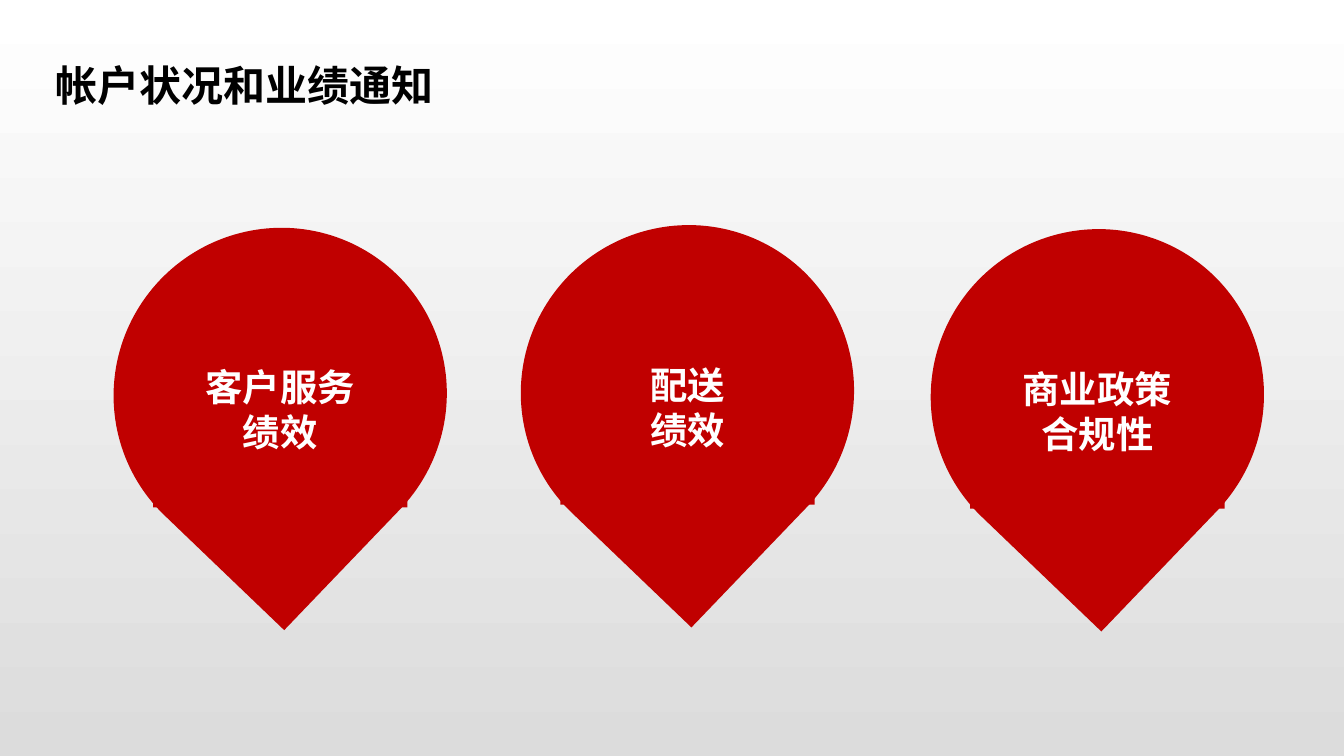
import pptx
import pptx.util
import pptx.dml.color
import pptx.enum.shapes
import pptx.enum.text
import pptx.oxml.ns
import lxml.etree

SLIDE_W = 10
SLIDE_H = SLIDE_W * 9 / 16
RED, WHITE, BLACK, GREY = "C00000", "FFFFFF", "000000", "DCDCDC"
SHAPE = pptx.enum.shapes.MSO_SHAPE
ALIGN = pptx.enum.text.PP_ALIGN
ANCHOR = pptx.enum.text.MSO_ANCHOR

PIN_W, PIN_H = 2.49, 2.47
PINS = [
    (0.84, 1.70, ["客户服务", "绩效"]),
    (3.87, 1.68, ["配送", "绩效"]),
    (6.92, 1.71, ["商业政策", "合规性"]),
]
# Parts of a pin as shares of its box: left, top, width, height
OUTER = (0, 0, 1, 1)
INNER = (0.04, 0.05, 0.92, 0.91)
LABEL = (0.12, 0.39, 0.76, 0.45)


def rgb(color):
    return pptx.dml.color.RGBColor.from_string(color)


def inches(box):
    return [pptx.util.Inches(v) for v in box]


def share(box, part):
    x, y, w, h = box
    px, py, pw, ph = part
    return x + px * w, y + py * h, pw * w, ph * h


def write(tf, lines, font, size, color, align):
    tf.word_wrap = True
    tf.vertical_anchor = ANCHOR.TOP
    for i, line in enumerate(lines):
        p = tf.paragraphs[0] if i == 0 else tf.add_paragraph()
        p.alignment = align
        p.add_run().text = line
        f = p.font
        f.name, f.size, f.bold = font, pptx.util.Pt(size), True
        f.color.rgb = rgb(color)
        # East Asian typeface follows the Latin one
        latin = f._element.find(pptx.oxml.ns.qn("a:latin"))
        ea = lxml.etree.Element(pptx.oxml.ns.qn("a:ea"), typeface=font)
        latin.addnext(ea)


def add_background(s):
    fill = s.background.fill
    fill.gradient()
    fill.gradient_angle = 270
    for stop, position, color in zip(fill.gradient_stops, (0, 1), (WHITE, GREY)):
        stop.position = position
        stop.color.rgb = rgb(color)


def add_title(s, box):
    title = s.shapes.title
    title.left, title.top, title.width, title.height = inches(box)
    write(title.text_frame, ["帐户状况和业绩通知"], "Arial", 22.5, BLACK, ALIGN.LEFT)


def add_pin(s, box, lines):
    group = s.shapes.add_group_shape()

    def add_part(kind, part, rotation=0):
        sp = group.shapes.add_shape(kind, *inches(share(box, part)))
        sp.rotation = rotation
        sp.shadow.inherit = False
        sp.fill.solid()
        sp.fill.fore_color.rgb = rgb(RED)
        sp.line.fill.background()
        return sp

    # Two teardrops pointing down, then the label over them
    for part in (INNER, OUTER):
        add_part(SHAPE.TEAR, part, 133.8)
    label = add_part(SHAPE.RECTANGLE, LABEL)
    write(label.text_frame, lines, "Noto Sans CJK SC", 20, WHITE, ALIGN.CENTER)


def main():
    prs = pptx.Presentation()
    prs.slide_width, prs.slide_height = inches((SLIDE_W, SLIDE_H))
    s = prs.slides.add_slide(prs.slide_layouts[5])
    add_background(s)
    add_title(s, (0.31, 0.39, 5.47, 0.48))
    for x, y, lines in PINS:
        add_pin(s, (x, y, PIN_W, PIN_H), lines)
    prs.save("out.pptx")


if __name__ == "__main__":
    main()
